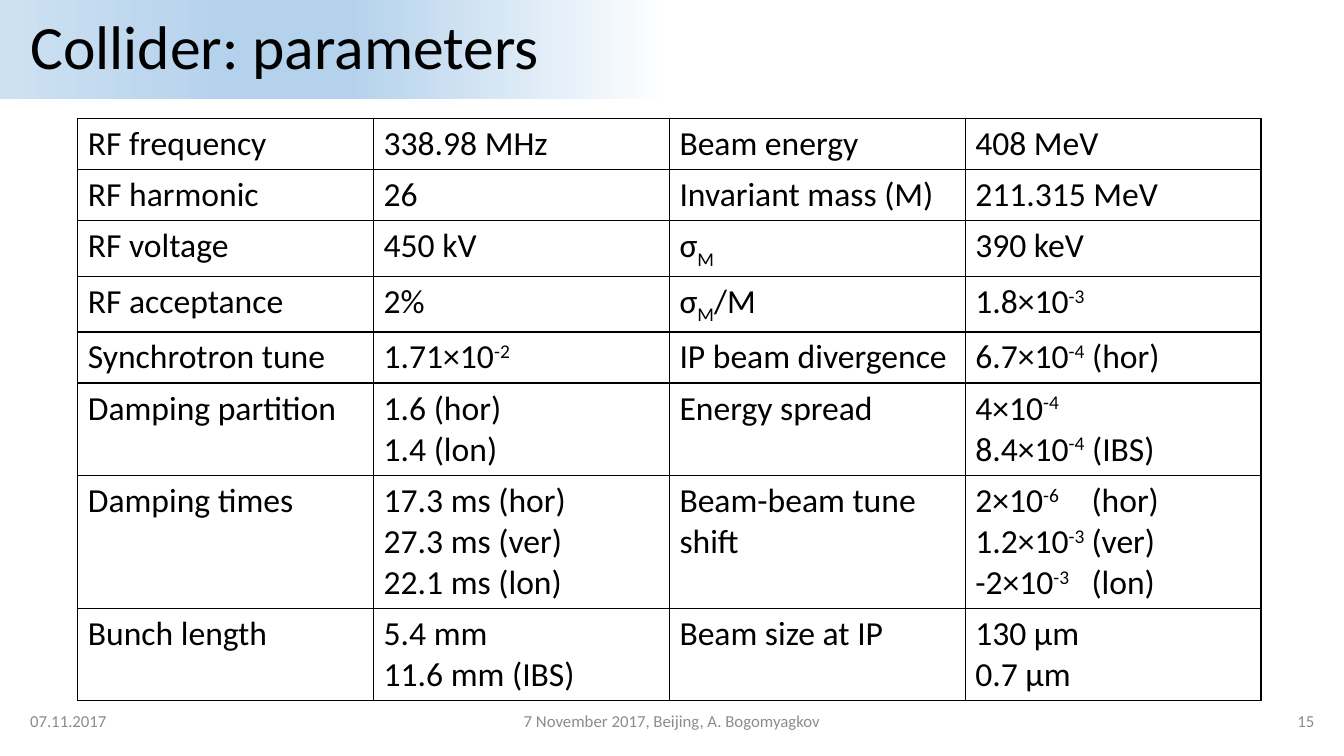
from lxml import etree
from pptx import Presentation
from pptx.dml.color import RGBColor
from pptx.enum import shapes, text
from pptx.oxml import ns, parse_xml
from pptx.util import Pt

BLACK = RGBColor(0x00, 0x00, 0x00)
GREY = RGBColor(0x8C, 0x8C, 0x8C)
WHITE = RGBColor(0xFF, 0xFF, 0xFF)
SKY = RGBColor(0xB5, 0xD2, 0xEC)
PALE_SKY = RGBColor(0xCE, 0xE1, 0xF2)
FONT = "Calibri"
A = ns.nsdecls("a")

# ^…^ marks a superscript, _…_ a subscript
PARAMETERS = [
    ["RF frequency", "338.98 MHz", "Beam energy", "408 MeV"],
    ["RF harmonic", "26", "Invariant mass (M)", "211.315 MeV"],
    ["RF voltage", "450 kV", "σ_M_", "390 keV"],
    ["RF acceptance", "2%", "σ_M_/M", "1.8×10^-3^"],
    ["Synchrotron tune", "1.71×10^-2^", "IP beam divergence", "6.7×10^-4^ (hor)"],
    ["Damping partition", "1.6 (hor)\n1.4 (lon)", "Energy spread",
     "4×10^-4^\n8.4×10^-4^ (IBS)"],
    ["Damping times", "17.3 ms (hor)\n27.3 ms (ver)\n22.1 ms (lon)",
     "Beam-beam tune shift",
     "2×10^-6^\t(hor)\n1.2×10^-3^\t(ver)\n-2×10^-3^\t(lon)"],
    ["Bunch length", "5.4 mm\n11.6 mm (IBS)", "Beam size at IP", "130 μm\n0.7 μm"],
]


def style(run, size, color):
    run.font.name = FONT
    run.font.size = Pt(size)
    run.font.color.rgb = color


def write_marked(paragraph, marked):
    """Write one line, raising ^…^ and lowering _…_."""
    mark, baseline = ("_", "-25000") if "_" in marked else ("^", "30000")
    for i, part in enumerate(marked.split(mark)):
        if part:
            run = paragraph.add_run()
            run.text = part
            style(run, 24, BLACK)
            if i % 2:
                run.font._element.set("baseline", baseline)
    if "\t" in marked:
        paragraph._p.get_or_add_pPr().append(parse_xml(
            f'<a:tabLst {A}><a:tab pos="{Pt(83)}" algn="l"/></a:tabLst>'))


deck = Presentation()
deck.slide_width, deck.slide_height = Pt(960), Pt(540)
slide = deck.slides.add_slide(deck.slide_layouts[6])

# Title band
title = slide.shapes.add_shape(shapes.MSO_SHAPE.RECTANGLE, 0, 0, Pt(960), Pt(70.6))
title.shadow.inherit = False
title.line.fill.background()
title.fill.gradient()
title.fill.gradient_angle = 180
stops = title._element.spPr.find(ns.qn("a:gradFill")).find(ns.qn("a:gsLst"))
for stop in list(stops):
    stops.remove(stop)
for percent, color in [(50, WHITE), (74, SKY), (83, SKY), (100, PALE_SKY)]:
    stop = etree.SubElement(stops, ns.qn("a:gs"), pos=str(percent * 1000))
    etree.SubElement(stop, ns.qn("a:srgbClr"), val=str(color))
title.text_frame.text = "Collider: parameters"
title.text_frame.margin_left = Pt(21.6)
title.text_frame.vertical_anchor = text.MSO_ANCHOR.MIDDLE
heading = title.text_frame.paragraphs[0]
heading.alignment = text.PP_ALIGN.LEFT
heading.line_spacing = 0.9
style(heading.runs[0], 44, BLACK)

# Parameter table; rows grow to fit their lines
ROW_HEIGHT = 29.2
table = slide.shapes.add_table(
    len(PARAMETERS), 4, Pt(55.6), Pt(84.6),
    Pt(845.2), Pt(ROW_HEIGHT * len(PARAMETERS))).table
table.first_row = table.horz_banding = False
for column in table.columns:
    column.width = Pt(211.3)
for row, entries in zip(table.rows, PARAMETERS):
    row.height = Pt(ROW_HEIGHT)
    for cell, entry in zip(row.cells, entries):
        for i, line in enumerate(entry.split("\n")):
            frame = cell.text_frame
            write_marked(frame.add_paragraph() if i else frame.paragraphs[0], line)
        properties = cell._tc.get_or_add_tcPr()
        for side in ("lnL", "lnR", "lnT", "lnB"):
            properties.append(parse_xml(
                f'<a:{side} {A} w="{Pt(1)}"><a:solidFill>'
                f'<a:srgbClr val="{BLACK}"/></a:solidFill></a:{side}>'))
        cell.fill.background()

# Footer
for left, width, words, alignment in [
    (14.4, 216, "07.11.2017", text.PP_ALIGN.LEFT),
    (318, 324, "7 November 2017, Beijing, A. Bogomyagkov", text.PP_ALIGN.CENTER),
    (730, 216, "15", text.PP_ALIGN.RIGHT),
]:
    footer = slide.shapes.add_textbox(Pt(left), Pt(500.4), Pt(width), Pt(28.8))
    footer.text_frame.word_wrap = True
    footer.text_frame.vertical_anchor = text.MSO_ANCHOR.MIDDLE
    footer.text_frame.text = words
    footer.text_frame.paragraphs[0].alignment = alignment
    style(footer.text_frame.paragraphs[0].runs[0], 12, GREY)

deck.save("out.pptx")
